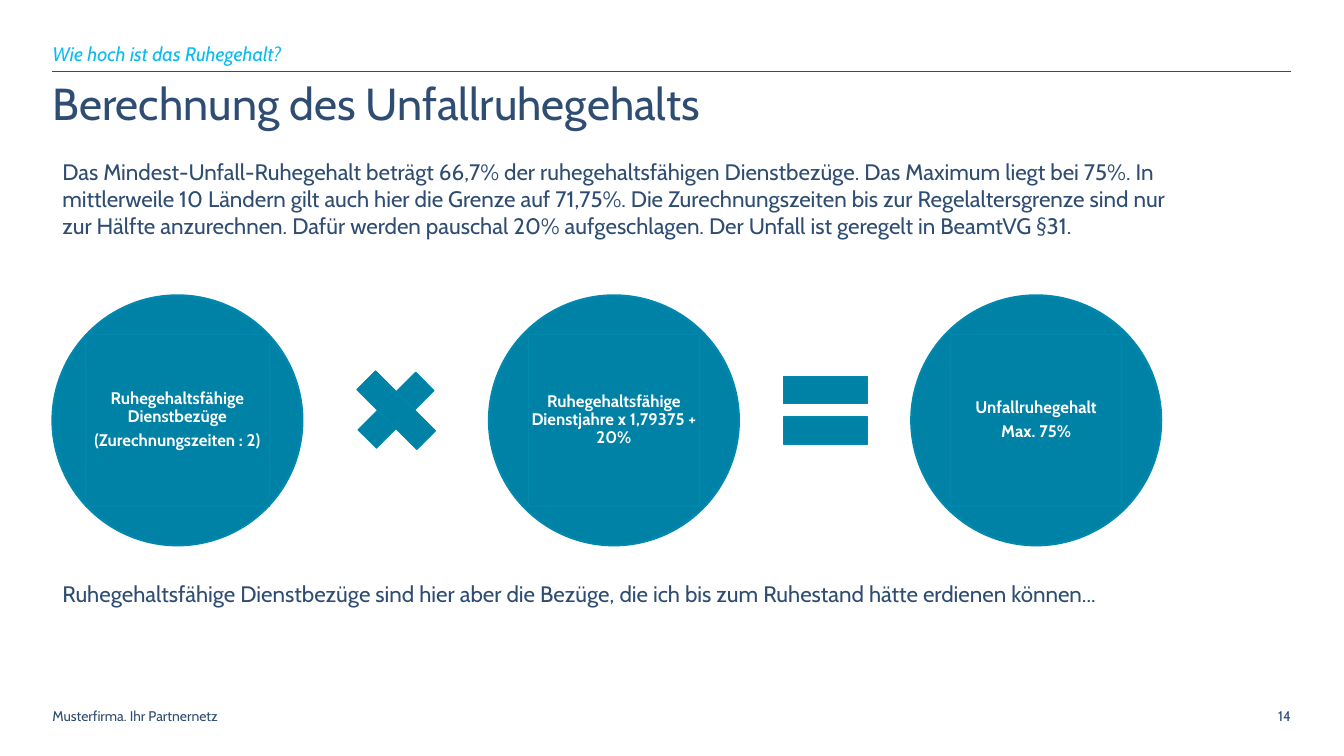
from dataclasses import dataclass

from lxml.etree import SubElement
from pptx import Presentation
from pptx.dml.color import RGBColor
from pptx.enum.shapes import MSO_CONNECTOR, MSO_SHAPE
from pptx.enum.text import MSO_ANCHOR, PP_ALIGN
from pptx.oxml.ns import qn
from pptx.util import Inches, Pt


@dataclass(frozen=True)
class Theme:
    font: str = "Cabin"
    navy: str = "2F4D72"
    cyan: str = "0ABBEF"
    teal: str = "0081A6"
    edge: str = "0088AE"
    white: str = "FFFFFF"
    title: int = 32
    body: int = 16
    kicker: int = 14
    label: int = 12
    footer: int = 10


@dataclass(frozen=True)
class Box:
    """Left and width in percent of slide width, top and height of slide height."""
    x: float
    y: float
    w: float
    h: float

    def emu(self) -> tuple[int, int, int, int]:
        return (int(W * self.x / 100), int(H * self.y / 100),
                int(W * self.w / 100), int(H * self.h / 100))

    def inner(self, w: float, h: float) -> "Box":
        return Box(self.x + (self.w - w) / 2, self.y + (self.h - h) / 2, w, h)


@dataclass(frozen=True)
class Term:
    x: float
    label_w: float
    lines: tuple[str, ...]


@dataclass(frozen=True)
class Sign:
    kind: MSO_SHAPE
    box: Box
    line: float
    rotation: float = 0


@dataclass(frozen=True)
class Note:
    text: str
    box: Box
    fmt: dict


T = Theme()
W, H = Inches(13.333), Inches(7.5)
LEFT, CONTENT_W = 3.9, 92.15
FOOT_Y, FOOT_H = 93.6, 2.27
NO_INSET = (0, 0, 0, 0)
TEXT_INSET = (0.1, 0.05, 0.1, 0.05)

TERMS = (
    Term(LEFT, 13.73, ("Ruhegehaltsfähige Dienstbezüge", "(Zurechnungszeiten : 2)")),
    Term(36.38, 12.75, ("Ruhegehaltsfähige Dienstjahre x 1,79375 + 20%",)),
    Term(67.8, 12.75, ("Unfallruhegehalt", "Max. 75%")),
)
SIGNS = (
    Sign(MSO_SHAPE.MATH_PLUS, Box(25.2, 46.93, 8.55, 14.67), 0.75, 45),
    Sign(MSO_SHAPE.RECTANGLE, Box(26.33, 52.53, 6.3, 3.47), 0.75, 45),
    Sign(MSO_SHAPE.MATH_EQUAL, Box(57.15, 46.67, 8.55, 15.2), 1),
)
NOTES = (
    Note("Wie hoch ist das Ruhegehalt?", Box(LEFT, 5.47, CONTENT_W, 3.2),
         dict(size=T.kicker, color=T.cyan, italic=True, anchor=MSO_ANCHOR.BOTTOM)),
    Note("Das Mindest-Unfall-Ruhegehalt beträgt 66,7% der ruhegehaltsfähigen "
         "Dienstbezüge. Das Maximum liegt bei 75%. In mittlerweile 10 Ländern gilt "
         "auch hier die Grenze auf 71,75%. Die Zurechnungszeiten bis zur "
         "Regelaltersgrenze sind nur zur Hälfte anzurechnen. Dafür werden pauschal "
         "20% aufgeschlagen. Der Unfall ist geregelt in BeamtVG §31.",
         Box(LEFT, 20.27, 85, 12.13), dict(inset=TEXT_INSET)),
    Note("Ruhegehaltsfähige Dienstbezüge sind hier aber die Bezüge, die ich bis zum "
         "Ruhestand hätte erdienen können...",
         Box(LEFT, 76.13, 81, 4.93), dict(inset=TEXT_INSET)),
    Note("Musterfirma. Ihr Partnernetz", Box(LEFT, FOOT_Y, 14.02, FOOT_H),
         dict(size=T.footer, anchor=MSO_ANCHOR.MIDDLE, wrap=False)),
    Note("14", Box(92.3, FOOT_Y, 3.75, FOOT_H),
         dict(size=T.footer, anchor=MSO_ANCHOR.MIDDLE, align=PP_ALIGN.RIGHT)),
)


def rgb(color: str) -> RGBColor:
    return RGBColor.from_string(color)


def write(sp, *lines: str, size: float = T.body, color: str = T.navy,
          bold: bool = False, italic: bool = False, align=PP_ALIGN.LEFT,
          anchor=MSO_ANCHOR.TOP, inset=NO_INSET, spacing: float = 1.0,
          after: float = 0, wrap: bool = True) -> None:
    tf = sp.text_frame
    tf.word_wrap, tf.vertical_anchor = wrap, anchor
    (tf.margin_left, tf.margin_top,
     tf.margin_right, tf.margin_bottom) = map(Inches, inset)
    for i, line in enumerate(lines):
        p = tf.add_paragraph() if i else tf.paragraphs[0]
        p.alignment, p.line_spacing = align, spacing
        p.space_before, p.space_after = Pt(0), Pt(after)
        r = p.add_run()
        r.text = line
        f = r.font
        f.name, f.size, f.bold, f.italic = T.font, Pt(size), bold, italic
        f.color.rgb = rgb(color)


def add_solid(s, kind: MSO_SHAPE, box: Box, line: float, rotation: float = 0):
    sp = s.shapes.add_shape(kind, *box.emu())
    sp.shadow.inherit = False
    sp.fill.solid()
    sp.fill.fore_color.rgb = rgb(T.teal)
    sp.line.color.rgb = rgb(T.edge)
    sp.line.width = Pt(line)
    sp.rotation = rotation
    return sp


def add_term(s, term: Term) -> None:
    circle = Box(term.x, 39.07, 18.6, 33.07)
    add_solid(s, MSO_SHAPE.OVAL, circle, 1.5)
    label = add_solid(s, MSO_SHAPE.RECTANGLE, circle.inner(term.label_w, 22.67), 0.75)
    write(label, *term.lines, size=T.label, color=T.white, bold=True,
          align=PP_ALIGN.CENTER, anchor=MSO_ANCHOR.MIDDLE, inset=(0.02,) * 4,
          spacing=0.9, after=4.2)


def add_rule(s, y: float) -> None:
    x, top, w, _ = Box(LEFT, y, CONTENT_W, 0).emu()
    line = s.shapes.add_connector(MSO_CONNECTOR.STRAIGHT, x, top, x + w, top)
    line.line.color.rgb = rgb(T.navy)
    line.line.width = Pt(0.5)
    SubElement(line._element.spPr, qn("a:effectLst"))


def main() -> None:
    prs = Presentation()
    prs.slide_width, prs.slide_height = W, H
    s = prs.slides.add_slide(prs.slide_layouts[5])

    # Header
    add_rule(s, 9.47)
    title = s.shapes.title
    title.left, title.top, title.width, title.height = Box(LEFT, 10.8, CONTENT_W, 6.4).emu()
    write(title, "Berechnung des Unfallruhegehalts", size=T.title, spacing=0.9)

    # Formula
    for term in TERMS:
        add_term(s, term)
    for sign in SIGNS:
        add_solid(s, sign.kind, sign.box, sign.line, sign.rotation)

    # Kicker, body texts and footer
    for note in NOTES:
        write(s.shapes.add_textbox(*note.box.emu()), note.text, **note.fmt)

    prs.save("out.pptx")


if __name__ == "__main__":
    main()
